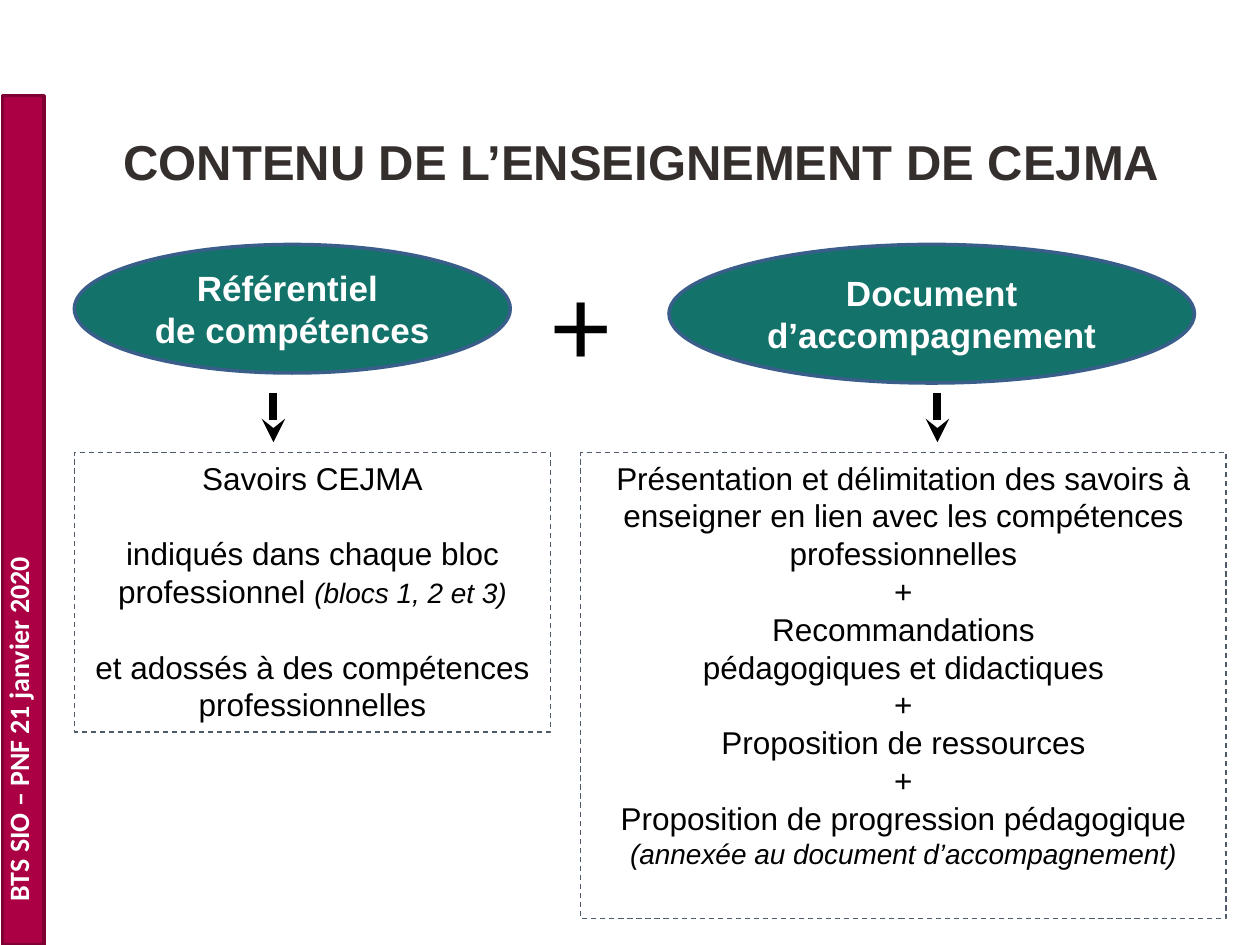
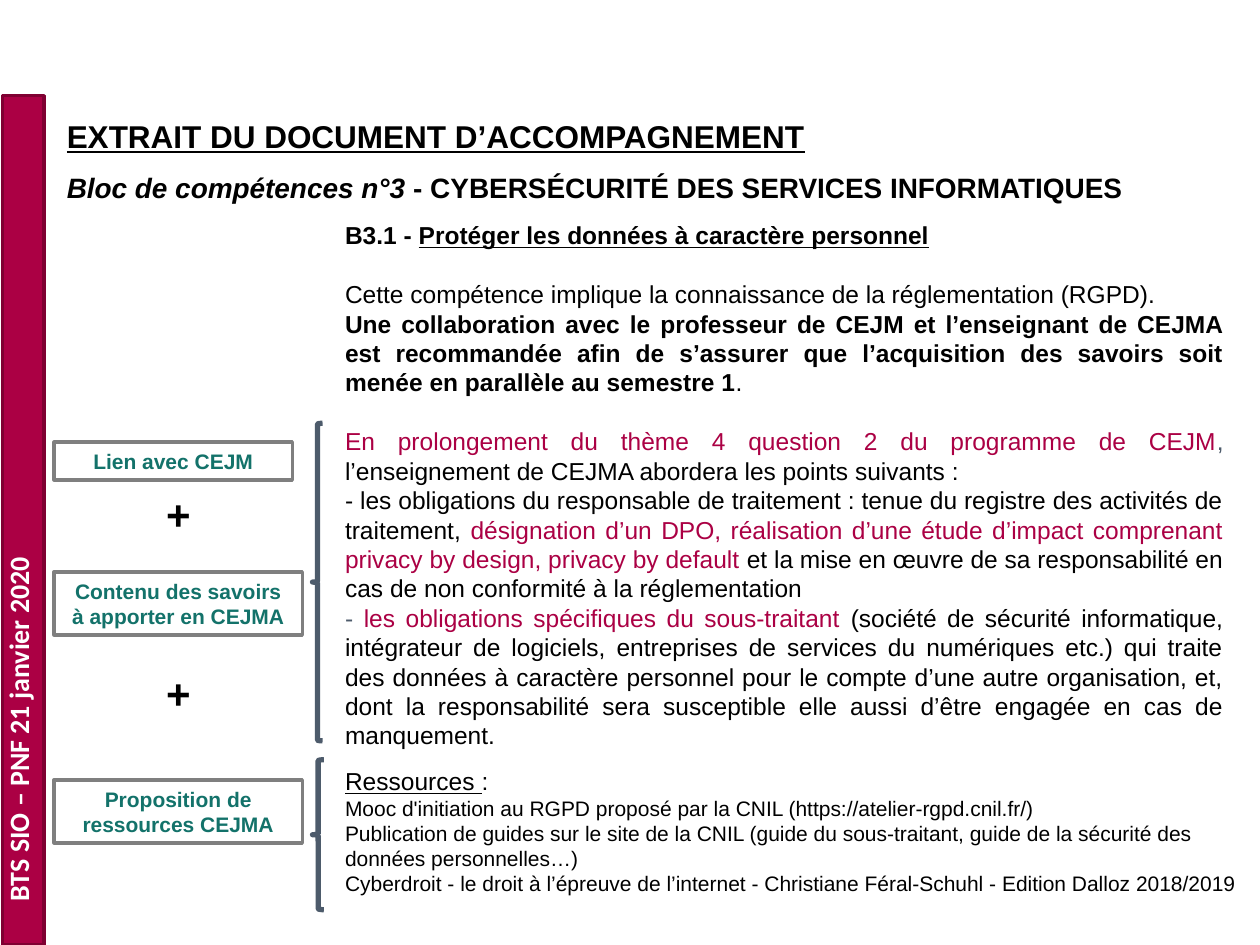
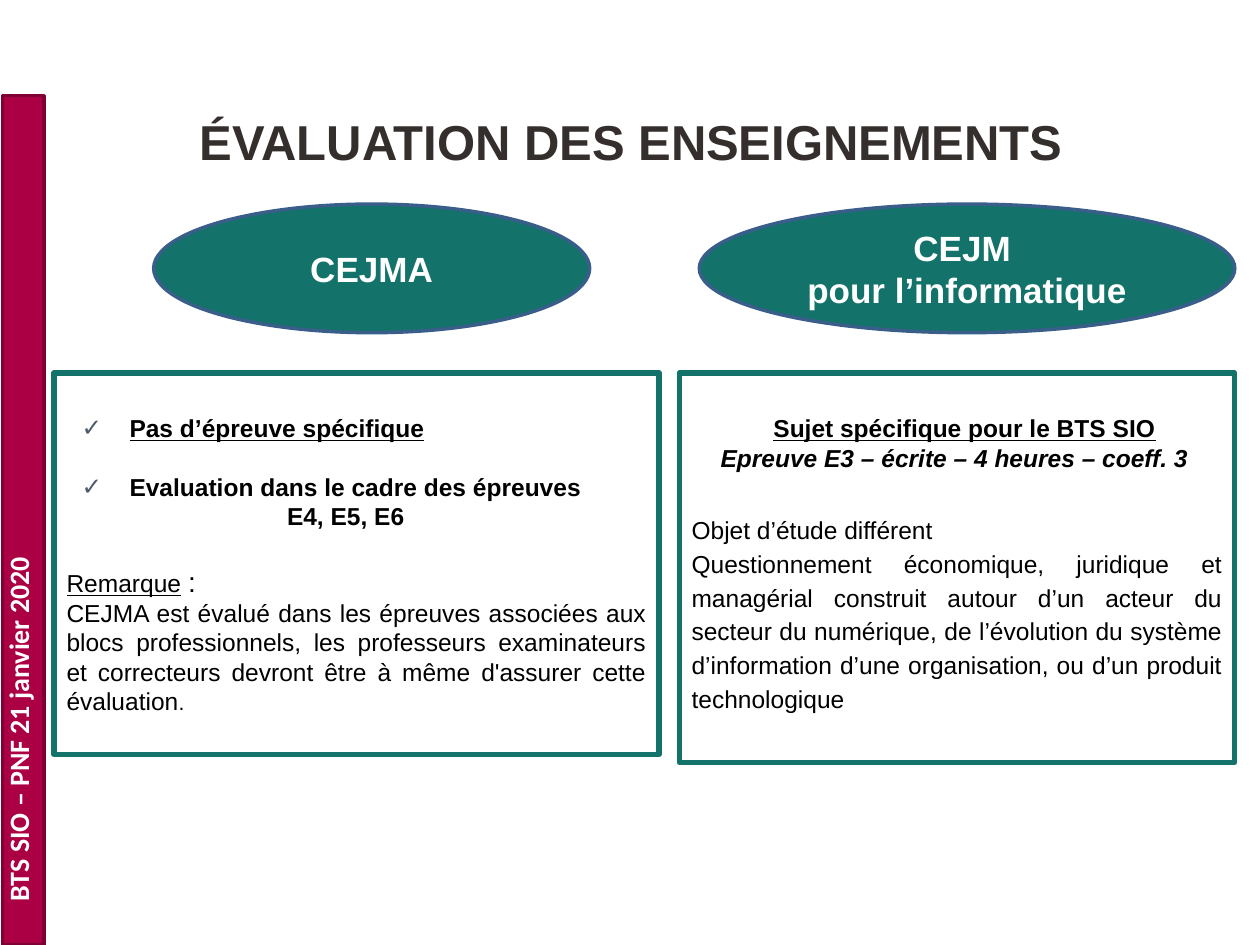
from dataclasses import dataclass
from typing import NamedTuple, Optional

from lxml.etree import SubElement
from pptx import Presentation
from pptx.dml.color import RGBColor
from pptx.enum.dml import MSO_LINE
from pptx.enum.shapes import MSO_CONNECTOR, MSO_SHAPE
from pptx.enum.text import MSO_ANCHOR, MSO_AUTO_SIZE, PP_ALIGN
from pptx.oxml.ns import qn
from pptx.util import Inches, Pt


@dataclass(frozen=True)
class Theme:
    heading_font: str = "Arial"
    side_font: str = "Calibri"
    black: str = "000000"
    white: str = "FFFFFF"
    title_color: str = "342E2C"
    crimson: str = "AB0044"
    crimson_edge: str = "7F0032"
    teal: str = "13726A"
    oval_edge: str = "395E89"
    slate: str = "4D5B6B"
    grey: str = "7F7F7F"
    title: float = 28
    oval: float = 20
    large: float = 18
    medium: float = 16
    body: float = 14
    small: float = 12
    plus: float = 24
    big_plus: float = 66
    line_height: float = 1.2


T = Theme()


class Box(NamedTuple):
    left: float
    top: float
    width: float
    height: float


class Insets(NamedTuple):
    left: float = 0.1
    top: float = 0.05
    right: float = 0.1
    bottom: float = 0.05


class Run(NamedTuple):
    text: str
    size: float = T.body
    color: str = T.black
    bold: bool = False
    italic: bool = False
    underline: bool = False
    font: str = T.heading_font


@dataclass(frozen=True)
class Para:
    runs: tuple[Run, ...]
    align: PP_ALIGN = PP_ALIGN.LEFT
    before: float = 0
    spacing: Optional[float] = None
    margin: float = 0
    indent: float = 0
    bullet: str = ""


class Stroke(NamedTuple):
    color: str
    width: float
    dash: Optional[MSO_LINE] = None


@dataclass(frozen=True)
class Panel:
    box: Box
    paras: list[Para]
    stroke: Stroke
    fill: Optional[str] = None
    kind: MSO_SHAPE = MSO_SHAPE.RECTANGLE
    anchor: MSO_ANCHOR = MSO_ANCHOR.TOP
    insets: Insets = Insets()


def rgb(value: str) -> RGBColor:
    return RGBColor.from_string(value)


def emu(box: Box) -> list[int]:
    return [Inches(v) for v in box]


def blank_line(size: float) -> float:
    return round(size * T.line_height, 1)


def centred(text: str, size: float, **style) -> Para:
    return Para((Run(text, size, **style),), PP_ALIGN.CENTER)


def format_paragraph(p, para: Para) -> None:
    pPr = p._p.get_or_add_pPr()
    if para.margin or para.indent:
        pPr.set("marL", str(Inches(para.margin)))
        pPr.set("indent", str(Inches(para.indent)))
    if para.bullet:
        color = SubElement(pPr, qn("a:buClr"))
        SubElement(color, qn("a:srgbClr")).set("val", T.slate)
        SubElement(pPr, qn("a:buFont")).set("typeface", T.heading_font)
        SubElement(pPr, qn("a:buChar")).set("char", para.bullet)
    p.alignment = para.align
    p.space_before = Pt(para.before)
    if para.spacing:
        p.line_spacing = para.spacing


def fill_text(tf, paras: list[Para], anchor: MSO_ANCHOR = MSO_ANCHOR.TOP,
              insets: Insets = Insets()) -> None:
    tf.word_wrap = True
    tf.auto_size = MSO_AUTO_SIZE.NONE
    tf.vertical_anchor = anchor
    tf.margin_left, tf.margin_top, tf.margin_right, tf.margin_bottom = (
        Inches(v) for v in insets)
    tf.text = "\n".join("" for _ in paras)
    for p, para in zip(tf.paragraphs, paras):
        format_paragraph(p, para)
        for run in para.runs:
            r = p.add_run()
            r.text = run.text
            r.font.name = run.font
            r.font.size = Pt(run.size)
            r.font.color.rgb = rgb(run.color)
            r.font.bold = run.bold
            r.font.italic = run.italic
            r.font.underline = run.underline


def add_text(s, box: Box, paras: list[Para]):
    sp = s.shapes.add_textbox(*emu(box))
    fill_text(sp.text_frame, paras)
    return sp


def add_outline(s, kind: MSO_SHAPE, box: Box, stroke: Stroke,
                fill: Optional[str] = None):
    sp = s.shapes.add_shape(kind, *emu(box))
    sp.shadow.inherit = False
    if fill:
        sp.fill.solid()
        sp.fill.fore_color.rgb = rgb(fill)
    else:
        sp.fill.background()
    sp.line.color.rgb = rgb(stroke.color)
    sp.line.width = Pt(stroke.width)
    if stroke.dash:
        sp.line.dash_style = stroke.dash
    return sp


def add_panel(s, panel: Panel) -> None:
    sp = add_outline(s, panel.kind, panel.box, panel.stroke, panel.fill)
    fill_text(sp.text_frame, panel.paras, panel.anchor, panel.insets)


def add_oval(s, box: Box, *lines: str) -> None:
    paras = [centred(line, T.oval, color=T.white, bold=True) for line in lines]
    add_panel(s, Panel(box, paras, Stroke(T.oval_edge, 2), T.teal,
                       MSO_SHAPE.OVAL, MSO_ANCHOR.MIDDLE))


def add_down_arrow(s, x: float, top: float, bottom: float) -> None:
    line = s.shapes.add_connector(MSO_CONNECTOR.STRAIGHT, Inches(x), Inches(top),
                                  Inches(x), Inches(bottom))
    line.line.color.rgb = rgb(T.black)
    line.line.width = Pt(4.5)
    SubElement(line.line._get_or_add_ln(), qn("a:tailEnd")).set("type", "stealth")
    SubElement(line._element.spPr, qn("a:effectLst"))


def add_slide(prs, box: Box, title: list[Para],
              anchor: MSO_ANCHOR = MSO_ANCHOR.MIDDLE, insets: Insets = Insets()):
    s = prs.slides.add_slide(prs.slide_layouts[5])
    sp = s.shapes.title
    sp.left, sp.top, sp.width, sp.height = emu(box)
    fill_text(sp.text_frame, title, anchor, insets)
    add_outline(s, MSO_SHAPE.RECTANGLE, Box(0.02, 0.76, 0.33, 6.74),
                Stroke(T.crimson_edge, 2), T.crimson)
    side = add_text(s, Box(-0.04, 0.35, 0.47, 6.9), [Para((
        Run("BTS SIO – PNF 21 janvier 2020", T.medium, T.white, True,
            font=T.side_font),))])
    side.text_frame._txBody.bodyPr.set("vert", "vert270")
    return s


def main_title(text: str) -> list[Para]:
    return [centred(text, T.title, color=T.title_color, bold=True)]


def content_slide(prs) -> None:
    s = add_slide(prs, Box(0.59, 0.84, 9, 0.87),
                  main_title("CONTENU DE L’ENSEIGNEMENT DE CEJMA"))
    for x in (2.17, 7.44):
        add_down_arrow(s, x, 3.12, 3.51)
    gap = blank_line(T.large)
    knowledge = [
        centred("Savoirs CEJMA", T.large),
        Para((Run("indiqués dans chaque bloc professionnel ", T.large),
              Run("(blocs 1, 2 et 3)", T.medium, italic=True)),
             PP_ALIGN.CENTER, gap),
        Para((Run("et adossés à des compétences professionnelles", T.large),),
             PP_ALIGN.CENTER, gap),
    ]
    guidance = [centred(text, T.large) for text in (
        "Présentation et délimitation des savoirs à enseigner en lien avec "
        "les compétences professionnelles",
        "+",
        "Recommandations",
        "pédagogiques et didactiques",
        "+",
        "Proposition de ressources",
        "+",
        "Proposition de progression pédagogique",
    )]
    guidance.append(centred("(annexée au document d’accompagnement)", T.medium,
                            italic=True))
    dashed = Stroke(T.slate, 0.75, MSO_LINE.DASH)
    add_panel(s, Panel(Box(0.59, 3.59, 3.78, 2.22), knowledge, dashed))
    add_panel(s, Panel(Box(4.61, 3.59, 5.12, 3.7), guidance, dashed))
    add_oval(s, Box(0.59, 1.94, 3.46, 1.02), "Référentiel ", "de compétences")
    add_oval(s, Box(5.31, 1.94, 4.17, 1.1), "Document d’accompagnement")
    add_text(s, Box(4.29, 1.94, 0.55, 1.21),
             [Para((Run("+", T.big_plus, font=T.side_font),))])


def extract_slide(prs) -> None:
    s = add_slide(prs, Box(0.43, 0.6, 9.37, 1.02), [
        Para((Run("EXTRAIT DU DOCUMENT D’ACCOMPAGNEMENT", T.large, bold=True,
                  underline=True),)),
        Para((Run("Bloc de compétences n°3 ", T.medium, bold=True, italic=True),
              Run("- CYBERSÉCURITÉ DES SERVICES INFORMATIQUES", T.medium,
                  bold=True)), before=9),
    ], MSO_ANCHOR.BOTTOM, Insets(bottom=0))
    justify, gap = PP_ALIGN.JUSTIFY, blank_line(T.body)
    add_text(s, Box(2.64, 1.7, 7.17, 3.6), [
        Para((Run("B3.1 - ", bold=True),
              Run("Protéger les données à caractère personnel", bold=True,
                  underline=True))),
        Para((Run("Cette compétence implique la connaissance de la "
                  "réglementation (RGPD)."),), justify, gap),
        Para((Run("Une collaboration avec le professeur de CEJM et l’enseignant "
                  "de CEJMA est recommandée afin de s’assurer que l’acquisition "
                  "des savoirs soit menée en parallèle au semestre 1", bold=True),
              Run(".")), justify),
        Para((Run("En prolongement du thème 4 question 2 du programme de CEJM",
                  color=T.crimson),
              Run(", ", color=T.slate),
              Run("l’enseignement de CEJMA abordera les points suivants :")),
             justify, gap),
        Para((Run("- les obligations du responsable de traitement : tenue du "
                  "registre des activités de traitement, "),
              Run("désignation d’un DPO, réalisation d’une étude d’impact "
                  "comprenant privacy by design, privacy by default ",
                  color=T.crimson),
              Run("et la mise en œuvre de sa responsabilité en cas de non "
                  "conformité à la réglementation")), justify),
        Para((Run("- ", color=T.slate),
              Run("les obligations spécifiques du sous-traitant ",
                  color=T.crimson),
              Run("(société de sécurité informatique, intégrateur de logiciels, "
                  "entreprises de services du numériques etc.) qui traite des "
                  "données à caractère personnel pour le compte d’une autre "
                  "organisation, et, dont la responsabilité sera susceptible "
                  "elle aussi d’être engagée en cas de manquement.")), justify),
    ])
    resources = (
        "Mooc d'initiation au RGPD proposé par la CNIL "
        "(https://atelier-rgpd.cnil.fr/)",
        "Publication de guides sur le site de la CNIL (guide du sous-traitant, "
        "guide de la sécurité des données personnelles…)",
        "Cyberdroit - le droit à l’épreuve de l’internet - Christiane "
        "Féral-Schuhl - Edition Dalloz 2018/2019",
    )
    add_text(s, Box(2.64, 6.03, 7.36, 1.1), [
        Para((Run("Ressources ", underline=True), Run(":"))),
        *(Para((Run(text, T.small),)) for text in resources),
    ])
    for brace in (Box(2.48, 3.36, 0.08, 2.52), Box(2.48, 6.03, 0.09, 1.19)):
        add_outline(s, MSO_SHAPE.LEFT_BRACE, brace, Stroke(T.slate, 3))
    for top in (3.83, 5.25):
        add_text(s, Box(1.22, top, 0.4, 0.5),
                 [Para((Run("+", T.plus, bold=True),))])
    for box, label in (
        (Box(0.43, 3.51, 1.89, 0.3), "Lien avec CEJM"),
        (Box(0.43, 4.54, 1.97, 0.5), "Contenu des savoirs à apporter en CEJMA"),
        (Box(0.43, 6.19, 1.97, 0.5), "Proposition de ressources CEJMA"),
    ):
        add_panel(s, Panel(box, [centred(label, T.small, color=T.teal, bold=True)],
                           Stroke(T.grey, 2), T.white))


def evaluation_slide(prs) -> None:
    s = add_slide(prs, Box(0.51, 0.68, 9, 0.87),
                  main_title("ÉVALUATION DES ENSEIGNEMENTS"))
    frame, lowered = Stroke(T.teal, 3), Insets(top=0.32)
    add_panel(s, Panel(Box(0.43, 2.96, 4.8, 3.03), [
        Para((Run("Pas d’épreuve spécifique", bold=True, underline=True),),
             margin=0.5, indent=-0.38, bullet="✓"),
        Para((Run("Evaluation dans le cadre des épreuves", bold=True),),
             before=blank_line(T.body), margin=0.5, indent=-0.38, bullet="✓"),
        Para((Run("E4, E5, E6", bold=True),), margin=1.75),
        Para((Run("Remarque", underline=True), Run(" "), Run(":", T.medium)),
             before=blank_line(T.medium)),
        Para((Run("CEJMA est évalué dans les épreuves associées aux blocs "
                  "professionnels, les professeurs examinateurs et correcteurs "
                  "devront être à même d'assurer cette évaluation"),
              Run(".", T.small)), PP_ALIGN.JUSTIFY),
    ], frame, insets=lowered))
    add_panel(s, Panel(Box(5.39, 2.96, 4.41, 3.09), [
        Para((Run("Sujet spécifique pour le BTS SIO", bold=True,
                  underline=True),), PP_ALIGN.CENTER, margin=0.12),
        Para((Run("Epreuve E3 – écrite – 4 heures – coeff. 3", bold=True,
                  italic=True),), margin=0.23),
        Para((Run("Objet d’étude différent"),), before=22, spacing=1.15),
        Para((Run("Questionnement économique, juridique et managérial construit "
                  "autour d’un acteur du secteur du numérique, de l’évolution du "
                  "système d’information d’une organisation, ou d’un produit "
                  "technologique"),), PP_ALIGN.JUSTIFY, spacing=1.15),
    ], frame, T.white, insets=lowered))
    add_oval(s, Box(1.22, 1.62, 3.46, 1.02), "CEJMA")
    add_oval(s, Box(5.55, 1.62, 4.25, 1.02), "CEJM ", "pour l’informatique")


def main() -> None:
    prs = Presentation()
    prs.slide_width, prs.slide_height = Inches(10), Inches(7.5)
    content_slide(prs)
    extract_slide(prs)
    evaluation_slide(prs)
    prs.save("out.pptx")


if __name__ == "__main__":
    main()
